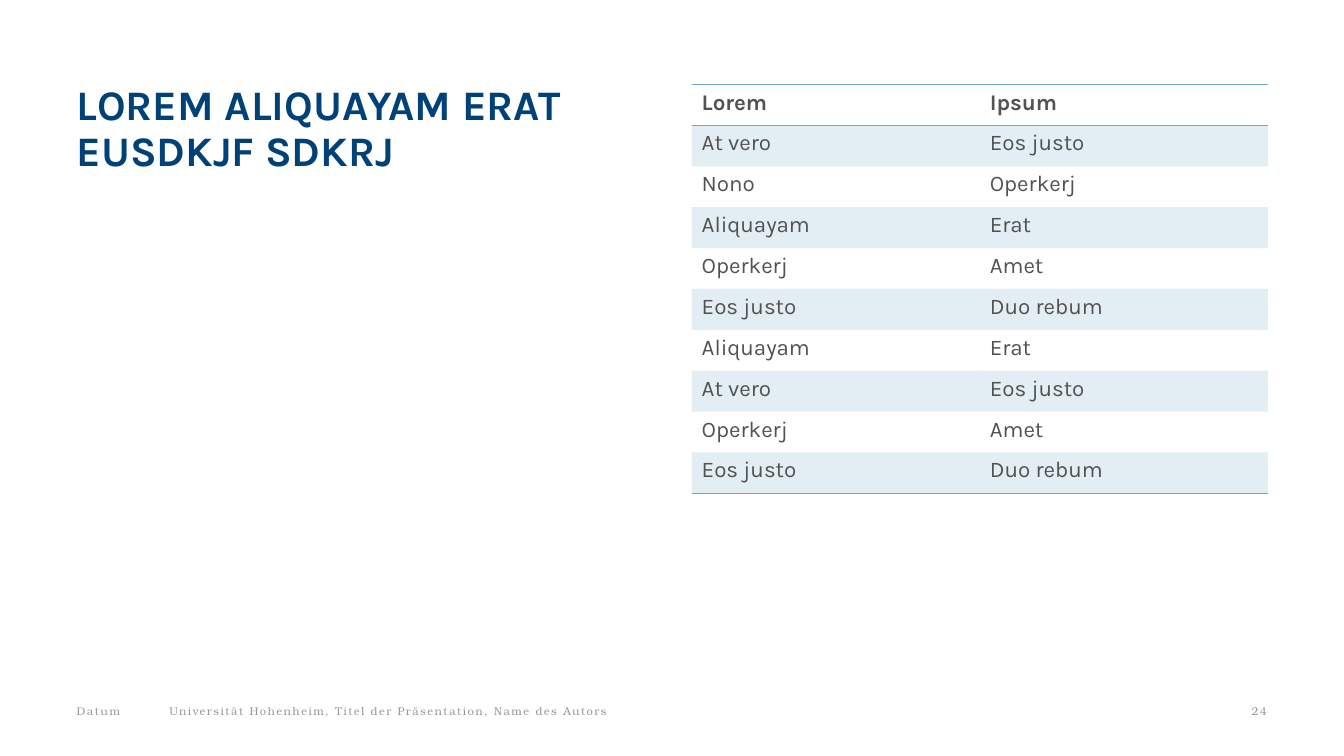
from dataclasses import dataclass

from lxml import etree
from pptx import Presentation
from pptx import util as u
from pptx.dml import color
from pptx.enum import text
from pptx.oxml import ns

COLORS = {"navy": "004178", "body": "525250", "footer": "989895", "accent": "6EAAC3"}
SANS, SERIF = "Karla", "TeX Gyre Bonum"
NO_STYLE = "{2D5ABB26-0587-4C30-8999-92F81FD0307C}"


@dataclass(frozen=True)
class TextStyle:
    font: str
    size: float
    color: str
    bold: bool = False
    spacing: int = 0


@dataclass(frozen=True)
class FooterItem:
    wording: str
    left: float
    width: float
    align: text.PP_ALIGN = text.PP_ALIGN.LEFT


TITLE = TextStyle(SANS, 30, "navy", bold=True)
HEADER = TextStyle(SANS, 16, "body", bold=True)
ENTRY = TextStyle(SANS, 16, "body")
FOOTER = TextStyle(SERIF, 8, "footer", spacing=100)

TITLE_LINES = ["LOREM ALIQUAYAM ERAT", "EUSDKJF SDKRJ"]
FOOTER_ITEMS = [
    FooterItem("Universität Hohenheim, Titel der Präsentation, Name des Autors", 4.27, 26.37),
    FooterItem("Datum", 1.93, 1.98),
    FooterItem("24", 29.95, 1.98, text.PP_ALIGN.RIGHT),
]
ENTRIES = [
    ("Lorem", "Ipsum"),
    ("At vero", "Eos justo"),
    ("Nono", "Operkerj"),
    ("Aliquayam", "Erat"),
    ("Operkerj", "Amet"),
    ("Eos justo", "Duo rebum"),
    ("Aliquayam", "Erat"),
    ("At vero", "Eos justo"),
    ("Operkerj", "Amet"),
    ("Eos justo", "Duo rebum"),
]
TOP = 2.13
COLUMN_WIDTH, ROW_HEIGHT = 7.26, 1.03


def add_run(paragraph, wording: str, style: TextStyle) -> None:
    run = paragraph.add_run()
    run.text = wording
    run.font.name = style.font
    run.font.size = u.Pt(style.size)
    run.font.bold = style.bold
    run.font.color.rgb = color.RGBColor.from_string(COLORS[style.color])
    if style.spacing:
        run._r.get_or_add_rPr().set("spc", str(style.spacing))


def add_frame(slide, left: float, top: float, width: float, height: float, inset: float):
    frame = slide.shapes.add_textbox(u.Cm(left), u.Cm(top), u.Cm(width), u.Cm(height)).text_frame
    frame.word_wrap = True
    frame.margin_left = frame.margin_right = 0
    frame.margin_top = frame.margin_bottom = u.Cm(inset)
    return frame


def add_title(slide) -> None:
    heading = add_frame(slide, 1.93, TOP, 14.5, 14.6, 0).paragraphs[0]
    heading.line_spacing = 0.9
    for index, line in enumerate(TITLE_LINES):
        if index:
            heading.add_line_break()
        add_run(heading, line, TITLE)


def add_footer(slide, item: FooterItem) -> None:
    frame = add_frame(slide, item.left, 17.63, item.width, 0.61, 0.13)
    frame.auto_size = text.MSO_AUTO_SIZE.SHAPE_TO_FIT_TEXT
    frame.paragraphs[0].alignment = item.align
    add_run(frame.paragraphs[0], item.wording, FOOTER)


def add_rules(cell, sides: list[str]) -> None:
    properties = cell._tc.get_or_add_tcPr()
    for position, side in enumerate(sides):
        rule = etree.Element(ns.qn(f"a:{side}"), w=str(u.Pt(1)))
        fill = etree.SubElement(rule, ns.qn("a:solidFill"))
        etree.SubElement(fill, ns.qn("a:srgbClr"), val=COLORS["accent"])
        properties.insert(position, rule)


def fill_cell(cell, banded: bool) -> None:
    if not banded:
        cell.fill.background()
        return
    cell.fill.solid()
    cell.fill.fore_color.rgb = color.RGBColor.from_string(COLORS["accent"])
    tint = cell._tc.tcPr.find(".//" + ns.qn("a:srgbClr"))
    etree.SubElement(tint, ns.qn("a:alpha"), val="20000")


def add_entries(slide) -> None:
    rows, columns = len(ENTRIES), len(ENTRIES[0])
    table = slide.shapes.add_table(
        rows, columns, u.Cm(17.43), u.Cm(TOP),
        u.Cm(columns * COLUMN_WIDTH), u.Cm(rows * ROW_HEIGHT),
    ).table
    table._tbl.tblPr.find(ns.qn("a:tableStyleId")).text = NO_STYLE
    table.horz_banding = False
    for column in table.columns:
        column.width = u.Cm(COLUMN_WIDTH)
    rules = {0: ["lnT", "lnB"], rows - 1: ["lnB"]}
    for row, entry in enumerate(ENTRIES):
        table.rows[row].height = u.Cm(ROW_HEIGHT)
        for column, wording in enumerate(entry):
            cell = table.cell(row, column)
            add_run(cell.text_frame.paragraphs[0], wording, ENTRY if row else HEADER)
            fill_cell(cell, row % 2 == 1)
            add_rules(cell, rules.get(row, []))


def main() -> None:
    deck = Presentation()
    deck.slide_width, deck.slide_height = u.Cm(33.87), u.Cm(19.05)
    slide = deck.slides.add_slide(deck.slide_layouts[6])
    for item in FOOTER_ITEMS:
        add_footer(slide, item)
    add_title(slide)
    add_entries(slide)
    deck.save("out.pptx")


if __name__ == "__main__":
    main()
